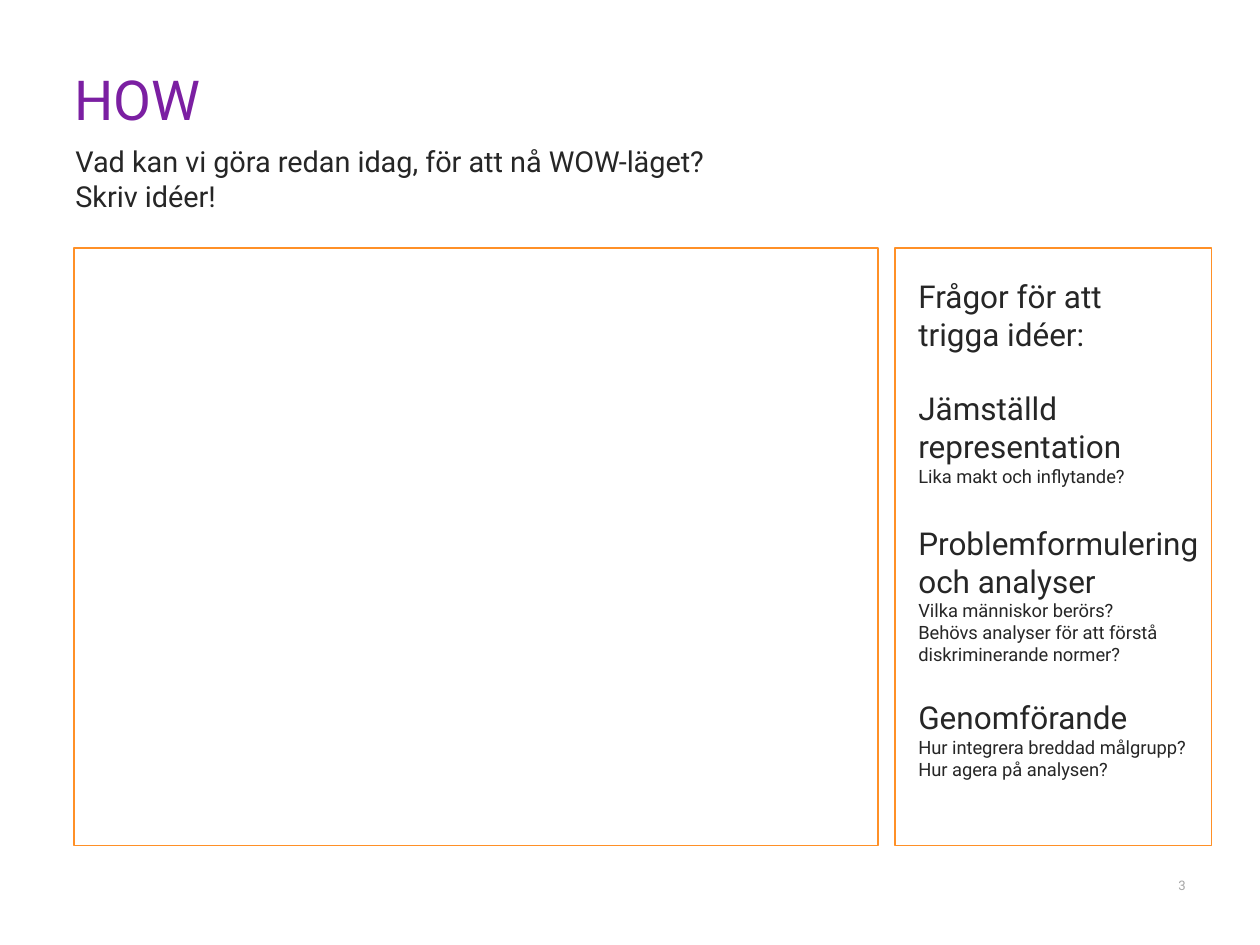
from pptx import Presentation
from pptx.dml.color import RGBColor
from pptx.enum.shapes import MSO_SHAPE as Shape
from pptx.enum.text import PP_ALIGN as Align
from pptx.util import Inches, Pt

COLOURS = {"title": "7B1FA2", "body": "262626", "number": "A6A6A6", "frame": "FF9027"}
COLUMNS, ROWS = 100, 75
HEADING, QUESTION = 18, 10.5


class Worksheet:
    font = "Roboto"

    def __init__(self, deck):
        self.page = deck.slides.add_slide(deck.slide_layouts[6])
        self.column = deck.slide_width / COLUMNS
        self.row = deck.slide_height / ROWS

    def place(self, left, top, width, height):
        return (int(left * self.column), int(top * self.row),
                int(width * self.column), int(height * self.row))

    def frame(self, *area):
        box = self.page.shapes.add_shape(Shape.RECTANGLE, *self.place(*area))
        box.shadow.inherit = False
        box.fill.background()
        box.line.color.rgb = RGBColor.from_string(COLOURS["frame"])
        box.line.width = Pt(1)

    def text(self, area, lines, colour="body", align=Align.LEFT, inset=True, spacing=None):
        box = self.page.shapes.add_textbox(*self.place(*area)).text_frame
        box.word_wrap = True
        if not inset:
            box.margin_left = box.margin_top = box.margin_right = box.margin_bottom = 0
        for index, (wording, size, gap) in enumerate(lines):
            para = box.add_paragraph() if index else box.paragraphs[0]
            para.text = wording
            para.alignment = align
            para.space_before = Pt(gap)
            if spacing:
                para.line_spacing = spacing
            para.font.name = self.font
            para.font.size = Pt(size)
            para.font.color.rgb = RGBColor.from_string(COLOURS[colour])

    def topic(self, area, heading, questions, intro=()):
        lines = [(line, HEADING, 0) for line in intro]
        lines.append((heading, HEADING, 21 if intro else 0))
        lines += [(question, QUESTION, 0) for question in questions]
        self.text(area, lines)


def main():
    deck = Presentation()
    deck.slide_width, deck.slide_height = Inches(10), Inches(7.5)
    sheet = Worksheet(deck)

    sheet.text((5.9, 5.8, 88.2, 7.7), [("HOW", 31.5, 0)], "title", inset=False, spacing=0.9)
    sheet.text((90.9, 69.6, 3.2, 1.4), [("3", 7.5, 0)], "number", Align.RIGHT, inset=False)
    sheet.text((5, 10.9, 58.5, 8.8), [
        ("Vad kan vi göra redan idag, för att nå WOW-läget?", 16.5, 0),
        ("Skriv idéer!", 16.5, 0),
    ])

    sheet.frame(5.9, 19.7, 63.8, 47.4)
    sheet.frame(71.05, 19.7, 25.1, 47.4)

    sheet.topic((71.9, 21.5, 20.8, 19.9), "Jämställd representation",
                ["Lika makt och inflytande?"],
                intro=["Frågor för att", "trigga idéer:"])
    sheet.topic((71.9, 41.1, 24.3, 14.4), "Problemformulering och analyser",
                ["Vilka människor berörs?",
                 "Behövs analyser för att förstå diskriminerande normer?"])
    sheet.topic((71.9, 54.9, 24.3, 9.6), "Genomförande",
                ["Hur integrera breddad målgrupp?", "Hur agera på analysen?"])

    deck.save("out.pptx")


if __name__ == "__main__":
    main()
